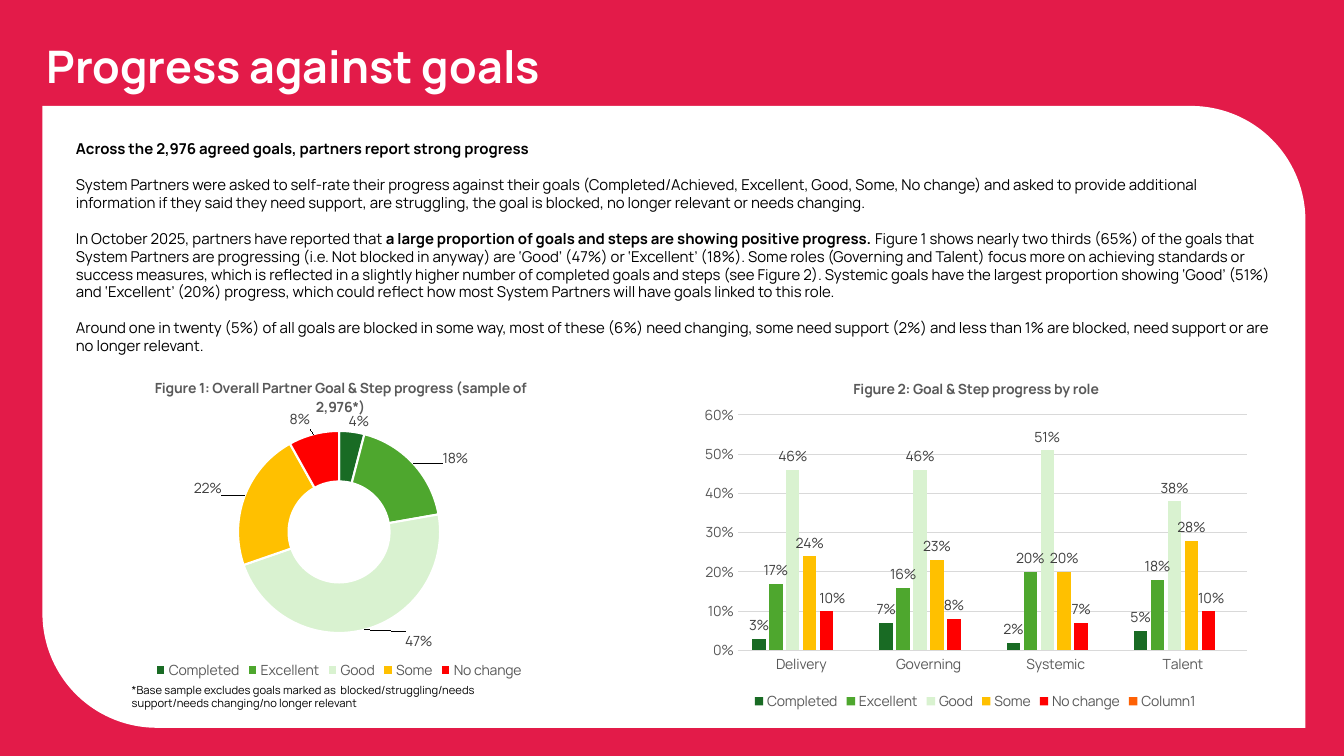
from lxml import etree
from pptx import Presentation
from pptx.chart.data import CategoryChartData
from pptx.dml.color import RGBColor
from pptx.enum.chart import XL_CHART_TYPE as ChartType, XL_LABEL_POSITION as LabelPosition
from pptx.enum.chart import XL_LEGEND_POSITION as LegendPosition, XL_TICK_MARK as TickMark
from pptx.enum.shapes import MSO_SHAPE as Shape
from pptx.enum.text import MSO_ANCHOR as Anchor, PP_ALIGN as Align
from pptx.oxml.ns import qn
from pptx.util import Cm, Pt

RED = RGBColor(0xE3, 0x1B, 0x49)
WHITE = RGBColor(0xFF, 0xFF, 0xFF)
BLACK = RGBColor(0, 0, 0)
GREY = RGBColor(0x59, 0x59, 0x59)
LABEL_GREY = RGBColor(0x40, 0x40, 0x40)
GRID = RGBColor(0xD9, 0xD9, 0xD9)
DARK_GREEN = RGBColor(0x19, 0x6B, 0x24)
GREEN = RGBColor(0x4E, 0xA7, 0x2E)
PALE_GREEN = RGBColor(0xD9, 0xF2, 0xD0)
AMBER = RGBColor(0xFF, 0xC0, 0)
BRIGHT_RED = RGBColor(0xFF, 0, 0)
ORANGE = RGBColor(0xFE, 0x61, 0x05)
RATING_COLORS = [DARK_GREEN, GREEN, PALE_GREEN, AMBER, BRIGHT_RED]
RATINGS = ["Completed", "Excellent", "Good", "Some", "No change"]

BODY = [
    [("Across the 2,976 agreed goals, partners report strong progress", True)],
    [("System Partners were asked to self-rate their progress against their goals (Completed/Achieved, "
      "Excellent, Good, Some, No change) and asked to provide additional information if they said they need "
      "support, are struggling, the goal is blocked, no longer relevant or needs changing.", False)],
    [("In October 2025, partners have reported that ", False),
     ("a large proportion of goals and steps are showing positive progress. ", True),
     ("Figure 1 shows nearly two thirds (65%) of the goals that System Partners are progressing (i.e. Not "
      "blocked in anyway) are ‘Good’ (47%) or ‘Excellent’ (18%). Some roles (Governing and Talent) focus more "
      "on achieving standards or success measures, which is reflected in a slightly higher number of completed "
      "goals and steps (see Figure 2). Systemic goals have the largest proportion showing ‘Good’ (51%) and "
      "‘Excellent’ (20%) progress, which could reflect how most System Partners will have goals linked to "
      "this role.", False)],
    [("Around one in twenty (5%) of all goals are blocked in some way, most of these (6%) need changing, some "
      "need support (2%) and less than 1% are blocked, need support or are no longer relevant.", False)],
]
FOOTNOTE = ("*Base sample excludes goals marked as  blocked/struggling/needs "
            "support/needs changing/no longer relevant")


class ProgressSlide:
    font_name = "Manrope"

    def __init__(self, presentation):
        self.slide = presentation.slides.add_slide(presentation.slide_layouts[5])

    def style(self, font, size, color, bold=False):
        font.name, font.size, font.bold = self.font_name, Pt(size), bold
        font.color.rgb = color

    def frame(self, shape, margin=0):
        text_frame = shape.text_frame
        text_frame.margin_left = text_frame.margin_right = margin
        text_frame.margin_top = text_frame.margin_bottom = margin // 2
        text_frame.vertical_anchor = Anchor.TOP
        text_frame.word_wrap = True
        return text_frame

    def panel(self, kind, box, color):
        shape = self.slide.shapes.add_shape(kind, *map(Cm, box))
        shape.shadow.inherit = False
        shape.fill.solid()
        shape.fill.fore_color.rgb = color
        shape.line.fill.background()
        return shape

    def title(self, text, box):
        title = self.slide.shapes.title
        title.left, title.top, title.width, title.height = map(Cm, box)
        title.element.getparent().append(title.element)
        text_frame = self.frame(title)
        text_frame.word_wrap = False
        text_frame.text = text
        paragraph = text_frame.paragraphs[0]
        paragraph.alignment = Align.LEFT
        paragraph.line_spacing = 0.9
        self.style(paragraph.font, 32, WHITE, True)

    def body(self, shape, paragraphs):
        text_frame = self.frame(shape)
        for index, pieces in enumerate(paragraphs):
            paragraph = text_frame.add_paragraph() if index else text_frame.paragraphs[0]
            paragraph.alignment = Align.LEFT
            paragraph.space_after = Pt(12.85)
            self.style(paragraph.font, 10.7, BLACK)
            for text, bold in pieces:
                run = paragraph.add_run()
                run.text = text
                run.font.bold = bold

    def note(self, text, box):
        text_frame = self.frame(self.slide.shapes.add_textbox(*map(Cm, box)), Cm(0.25))
        text_frame.text = text
        self.style(text_frame.paragraphs[0].font, 8, BLACK)

    def place(self, parent, after, **values):
        for old in parent.findall(qn("c:layout")):
            parent.remove(old)
        layout = etree.Element(qn("c:layout"))
        manual = etree.SubElement(layout, qn("c:manualLayout"))
        for name, value in values.items():
            etree.SubElement(manual, qn(f"c:{name}")).set("val", str(value))
        if after is None:
            parent.insert(0, layout)
        else:
            parent.find(qn(after)).addnext(layout)

    def chart(self, kind, box, title, title_at, plot_box, categories, series):
        data = CategoryChartData(number_format="0%")
        data.categories = categories
        for name, values in series:
            data.add_series(name, values)
        chart = self.slide.shapes.add_chart(kind, *map(Cm, box), data).chart
        self.style(chart.font, 10, GREY)
        chart.has_title = True
        chart.chart_title.text_frame.text = title
        self.style(chart.chart_title.text_frame.paragraphs[0].font, 10, GREY, True)
        self.place(chart.chart_title._element, "c:tx", xMode="edge", yMode="edge",
                   x=title_at[0], y=title_at[1])
        chart.has_legend = True
        chart.legend.position = LegendPosition.BOTTOM
        chart.legend.include_in_layout = False
        self.style(chart.legend.font, 10, GREY)
        left, top, width, height = plot_box
        self.place(chart.plots[0]._element.getparent(), None, layoutTarget="inner", xMode="edge",
                   yMode="edge", x=left, y=top, w=width, h=height)
        return chart

    def value_labels(self, series, position=None):
        labels = series.data_labels
        labels.show_value = True
        labels.number_format, labels.number_format_is_linked = "0%", False
        self.style(labels.font, 10, LABEL_GREY)
        if position is not None:
            labels.position = position

    def move_label(self, point, offset, position=None):
        label = point.data_label
        self.style(label.font, 10, LABEL_GREY)
        if position is not None:
            label.position = position
        self.place(label._get_or_add_dLbl(), "c:idx", x=offset[0], y=offset[1])

    def doughnut(self, values, offsets, **settings):
        chart = self.chart(ChartType.DOUGHNUT, categories=RATINGS, series=[("Series 1", values)], **settings)
        plot = chart.plots[0]
        plot._element.find(qn("c:holeSize")).set("val", "54")
        series = plot.series[0]
        self.value_labels(series)
        leader = series.data_labels._element.find(qn("c:showLeaderLines"))
        if leader is not None:
            leader.set("val", "1")
        for index, (color, offset) in enumerate(zip(RATING_COLORS, offsets)):
            point = series.points[index]
            point.format.fill.solid()
            point.format.fill.fore_color.rgb = color
            point.format.line.color.rgb = WHITE
            point.format.line.width = Pt(1.5)
            self.move_label(point, offset)

    def columns(self, **settings):
        chart = self.chart(ChartType.COLUMN_CLUSTERED, **settings)
        plot = chart.plots[0]
        plot.gap_width, plot.overlap, plot.vary_by_categories = 219, -27, False
        for series, color in zip(plot.series, RATING_COLORS + [ORANGE]):
            series.format.fill.solid()
            series.format.fill.fore_color.rgb = color
            if series.name in RATINGS:
                self.value_labels(series, LabelPosition.OUTSIDE_END)
        for index, shift in ((0, 0.01), (3, 0.005)):
            self.move_label(plot.series[4].points[index], (shift, 0), LabelPosition.OUTSIDE_END)
        for axis in (chart.category_axis, chart.value_axis):
            axis.major_tick_mark = axis.minor_tick_mark = TickMark.NONE
            self.style(axis.tick_labels.font, 10, GREY)
        values = chart.value_axis
        values.minimum_scale, values.maximum_scale, values.major_unit = 0, 0.6, 0.1
        values.tick_labels.number_format, values.tick_labels.number_format_is_linked = "0%", False
        values.format.line.fill.background()
        for line in (chart.category_axis.format.line, values.major_gridlines.format.line):
            line.color.rgb = GRID
            line.width = Pt(0.75)


def main():
    presentation = Presentation()
    presentation.slide_width, presentation.slide_height = Cm(33.87), Cm(19.05)
    page = ProgressSlide(presentation)
    page.panel(Shape.RECTANGLE, (0, 0, 33.87, 19.05), RED)
    page.title("Progress against goals", (1.17, 1.14, 29.21, 1.57))
    card = page.panel(Shape.ROUND_2_DIAG_RECTANGLE, (1.07, 2.67, 31.83, 15.67), WHITE)
    card.adjustments[0], card.adjustments[1] = 0, 0.184
    page.body(card, BODY)
    page.note(FOOTNOTE, (3.07, 17.09, 10.29, 0.94))
    page.doughnut(
        [0.04, 0.18, 0.47, 0.22, 0.08],
        [(0.02, -0.11), (0.12, -0.07), (0.12, 0.11), (-0.12, -0.05), (-0.04, -0.12)],
        box=(2.18, 9.02, 12.73, 8.2), title="Figure 1: Overall Partner Goal & Step progress (sample of 2,976*)",
        title_at=(0.13, 0.05), plot_box=(0.3, 0.22, 0.4, 0.63))
    role_values = [[0.03, 0.07, 0.02, 0.05], [0.17, 0.16, 0.2, 0.18], [0.46, 0.46, 0.51, 0.38],
                   [0.24, 0.23, 0.2, 0.28], [0.1, 0.08, 0.07, 0.1], [None] * 4]
    page.columns(
        box=(17.45, 9.02, 14.25, 8.99), title="Figure 2: Goal & Step progress by role",
        title_at=(0.28, 0.05), plot_box=(0.08, 0.16, 0.9, 0.66),
        categories=["Delivery", "Governing", "Systemic", "Talent"],
        series=list(zip(RATINGS + ["Column1"], role_values)))
    presentation.save("out.pptx")


if __name__ == "__main__":
    main()
